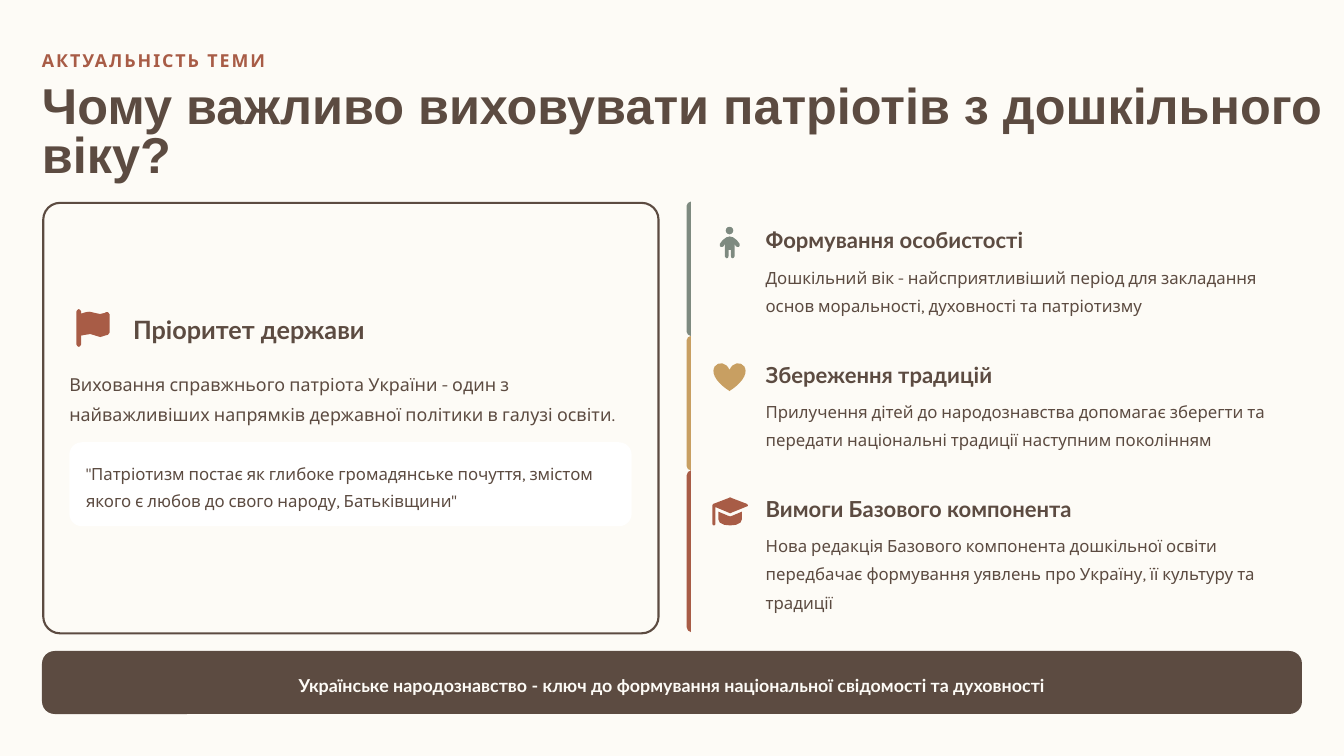
import pptx
import pptx.util
from pptx.dml.color import RGBColor
from pptx.enum.shapes import MSO_SHAPE
from pptx.enum.text import MSO_ANCHOR, MSO_AUTO_SIZE, PP_ALIGN

CREAM = RGBColor(0xFD, 0xFB, 0xF6)
WHITE = RGBColor(0xFF, 0xFF, 0xFF)
BROWN = RGBColor(0x5C, 0x4B, 0x41)
RUST = RGBColor(0xA8, 0x5C, 0x46)
SAGE = RGBColor(0x7E, 0x8A, 0x80)
GOLD = RGBColor(0xC8, 0x9F, 0x62)

# The slide is a grid of 32 columns by 18 rows of square cells.
CELL = pptx.util.Inches(10) / 18

deck = pptx.Presentation()
deck.slide_width = round(32 * CELL)
deck.slide_height = round(18 * CELL)
slide = deck.slides.add_slide(deck.slide_layouts[5])
slide.background.fill.solid()
slide.background.fill.fore_color.rgb = CREAM


def write(holder, at, words, face, size, color, spacing, bold=False, align=PP_ALIGN.LEFT):
    """Place a text holder on the grid and fill it with one formatted paragraph."""
    for side, cells in zip(("left", "top", "width", "height"), at):
        setattr(holder, side, round(cells * CELL))
    frame = holder.text_frame
    frame_format = {"word_wrap": True, "auto_size": MSO_AUTO_SIZE.NONE,
                    "vertical_anchor": MSO_ANCHOR.MIDDLE, "margin_left": 0,
                    "margin_right": 0, "margin_top": 0, "margin_bottom": 0}
    for name, value in frame_format.items():
        setattr(frame, name, value)
    paragraph = frame.paragraphs[0]
    paragraph.alignment = align
    paragraph.line_spacing = spacing
    run = paragraph.add_run()
    run.text = words
    for name, value in {"name": face, "size": pptx.util.Pt(size), "bold": bold}.items():
        setattr(run.font, name, value)
    run.font.color.rgb = color
    return run


def draw(outline, at, color, radius=None):
    """Draw a preset, or an outline given in percent of its box, on the grid."""
    left, top, width, height = [round(cells * CELL) for cells in at]
    if isinstance(outline, list):
        builder = slide.shapes.build_freeform(*outline[0], scale=(width / 100, height / 100))
        builder.add_line_segments(outline[1:], close=True)
        figure = builder.convert_to_shape(left, top)
    else:
        figure = slide.shapes.add_shape(outline, left, top, width, height)
    if radius:
        figure.adjustments[0] = radius / min(at[2:])
    figure.shadow.inherit = False
    figure.fill.solid()
    figure.fill.fore_color.rgb = color
    figure.line.fill.background()
    return figure


FLAG = [(3, 2), (7, 0), (11, 2), (14, 6), (14, 12), (29, 8), (38, 7), (46, 8), (55, 10),
        (71, 13), (86, 10), (89, 8), (95, 8), (100, 14), (100, 62), (95, 68), (86, 70),
        (72, 74), (57, 70), (42, 66), (27, 68), (14, 70), (14, 94), (11, 98), (7, 100),
        (3, 98), (0, 94), (0, 6)]
CHILD_BODY = [(50, 0), (67, 4), (86, 17), (100, 34), (100, 43), (96, 48), (88, 48), (81, 45),
              (75, 34), (75, 90), (71, 97), (65, 100), (58, 97), (56, 90), (56, 62), (44, 62),
              (44, 90), (42, 97), (35, 100), (29, 97), (25, 90), (25, 34), (19, 45), (12, 48),
              (4, 48), (0, 43), (0, 34), (14, 17), (33, 4)]
CAP_TOP = [(9, 35), (45, 54), (50, 57), (55, 54), (98, 32), (100, 30), (98, 24), (55, 3),
           (50, 0), (45, 3), (2, 24), (0, 30), (0, 95), (2, 99), (4, 100), (7, 99), (9, 95)]
CAP_BASE = [(17, 51), (17, 78), (21, 90), (34, 98), (50, 100), (66, 98), (79, 90), (83, 78),
            (83, 51), (57, 65), (50, 68), (43, 65)]
STRIPE = [(100, 0), (30, 1), (0, 3), (0, 97), (30, 99), (100, 100)]

# Heading
topic = write(slide.shapes.add_textbox(0, 0, 0, 0), (1, 1, 30.2, 0.7),
              "АКТУАЛЬНІСТЬ ТЕМИ", "Karla", 17, RUST, 1.3, bold=True)
topic.font._element.set("spc", "180")
write(slide.shapes.title, (1, 2, 30.6, 2.4),
      "Чому важливо виховувати патріотів з дошкільного віку?", "Arial", 48, BROWN, 0.8, bold=True)

# State priority card
card = draw(MSO_SHAPE.ROUNDED_RECTANGLE, (1.03, 4.83, 14.65, 10.25), CREAM, radius=0.4)
card.fill.background()
card.line.color.rgb = BROWN
card.line.width = pptx.util.Pt(2)
draw(FLAG, (1.82, 7.36, 0.79, 0.9), RUST)
draw(MSO_SHAPE.ROUNDED_RECTANGLE, (1.65, 10.53, 13.39, 2), WHITE, radius=0.3)
priority_texts = [
    ((3.17, 7.41, 5.55, 0.8), "Пріоритет держави", "Lato", 24, BROWN, 1.1, True),
    ((1.65, 8.68, 13.62, 1.47),
     "Виховання справжнього патріота України - один з найважливіших напрямків "
     "державної політики в галузі освіти.", "Karla", 17, BROWN, 1.4),
    ((2.05, 10.93, 12.8, 1.2),
     "\"Патріотизм постає як глибоке громадянське почуття, змістом якого є любов "
     "до свого народу, Батьківщини\"", "Karla", 16, BROWN, 1.3),
]
for priority_text in priority_texts:
    write(slide.shapes.add_textbox(0, 0, 0, 0), *priority_text)

# Reasons: stripe height, colour, heading, explanation, icon parts (column, row offset, size)
reasons = [
    (3.2, SAGE, "Формування особистості",
     "Дошкільний вік - найсприятливіший період для закладання основ моральності, "
     "духовності та патріотизму",
     [(MSO_SHAPE.OVAL, 17.28, 0.6, 0.18, 0.18), (CHILD_BODY, 17.14, 0.83, 0.47, 0.52)]),
    (3.2, GOLD, "Збереження традицій",
     "Прилучення дітей до народознавства допомагає зберегти та передати національні "
     "традиції наступним поколінням",
     [(MSO_SHAPE.HEART, 16.99, 0.64, 0.76, 0.67)]),
    (3.85, RUST, "Вимоги Базового компонента",
     "Нова редакція Базового компонента дошкільної освіти передбачає формування уявлень "
     "про Україну, її культуру та традиції",
     [(CAP_TOP, 16.96, 0.64, 0.85, 0.67), (CAP_BASE, 16.96, 0.64, 0.85, 0.67)]),
]
row = 4.8
for rows, color, heading, explanation, icon in reasons:
    draw(STRIPE, (16.35, row, 0.1, rows), color)
    for part, column, offset, width, height in icon:
        draw(part, (column, row + offset, width, height), color)
    write(slide.shapes.add_textbox(0, 0, 0, 0), (18.23, row + 0.5, 12.53, 0.7),
          heading, "Lato", 21, BROWN, 1.2, bold=True)
    write(slide.shapes.add_textbox(0, 0, 0, 0), (18.23, row + 1.4, 12.47, rows - 1.9),
          explanation, "Karla", 16, BROWN, 1.4)
    row += rows

# Conclusion
conclusion_at = (1, 15.5, 30, 1.5)
write(draw(MSO_SHAPE.ROUNDED_RECTANGLE, conclusion_at, BROWN, radius=0.3), conclusion_at,
      "Українське народознавство - ключ до формування національної свідомості та духовності",
      "Lato", 17, CREAM, 1.3, bold=True, align=PP_ALIGN.CENTER)

deck.save("out.pptx")
